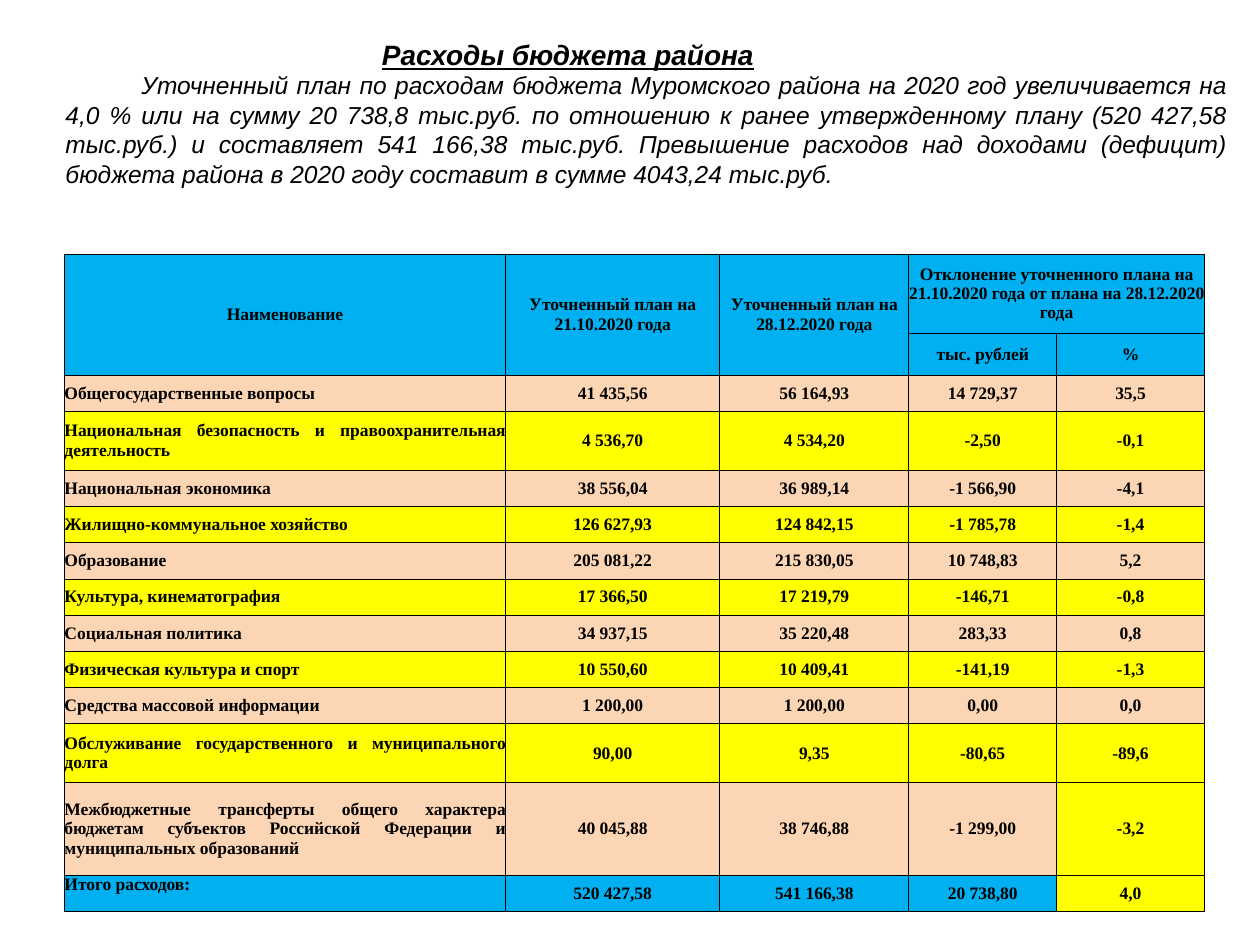
from dataclasses import dataclass

from lxml.etree import SubElement
from pptx import Presentation
from pptx.dml.color import RGBColor
from pptx.enum.text import MSO_ANCHOR, MSO_AUTO_SIZE, PP_ALIGN
from pptx.oxml.ns import qn
from pptx.util import Cm, Pt


@dataclass(frozen=True)
class Theme:
    text_font: str = "Arial"
    table_font: str = "Times New Roman"
    title_size: int = 16
    body_size: int = 14
    table_size: int = 10
    ink: str = "000000"
    blue: str = "00B0F0"
    peach: str = "FCD5B4"
    yellow: str = "FFFF00"
    border: float = 0.5


class SlideBuilder:
    def __init__(self, slide, theme):
        self.s = slide
        self.theme = theme

    def place(self, sp, left, top, width, height, inset):
        """Move a placeholder and return its text frame."""
        sp.left, sp.top, sp.width, sp.height = map(Cm, (left, top, width, height))
        tf = sp.text_frame
        tf.word_wrap = True
        tf.auto_size = MSO_AUTO_SIZE.NONE
        tf.vertical_anchor = MSO_ANCHOR.TOP
        tf.margin_left = tf.margin_right = Cm(inset)
        tf.margin_top = tf.margin_bottom = 0
        return tf

    def add_run(self, p, text, font, size, **flags):
        r = p.add_run()
        r.text = text
        r.font.name, r.font.size = font, Pt(size)
        r.font.color.rgb = RGBColor.from_string(self.theme.ink)
        for flag, value in flags.items():
            setattr(r.font, flag, value)

    def title(self, text, left, top, width, rule):
        """Title whose underline runs on to a tab stop."""
        tf = self.place(self.s.shapes.title, left, top, width, 0.7, 0)
        p = tf.paragraphs[0]
        p.alignment = PP_ALIGN.LEFT
        tabs = SubElement(p._p.get_or_add_pPr(), qn("a:tabLst"))
        SubElement(tabs, qn("a:tab"), pos=str(Cm(rule)), algn="l")
        self.add_run(p, text + "\t", self.theme.text_font, self.theme.title_size,
                     bold=True, italic=True, underline=True)

    def body(self, text, left, top, width, height, indent):
        tf = self.place(self.s.placeholders[1], left, top, width, height, 0.25)
        p = tf.paragraphs[0]
        p.alignment = PP_ALIGN.JUSTIFY
        p.space_before = Pt(0)
        pPr = p._p.get_or_add_pPr()
        pPr.set("marL", "0")
        pPr.set("indent", str(Cm(indent)))
        SubElement(pPr, qn("a:buNone"))
        self.add_run(p, text, self.theme.text_font, self.theme.body_size, italic=True)

    def cell(self, cell, text, fill, align):
        cell.margin_left = cell.margin_right = cell.margin_top = cell.margin_bottom = 0
        cell.vertical_anchor = MSO_ANCHOR.MIDDLE
        tcPr = cell._tc.get_or_add_tcPr()
        for side in ("lnL", "lnR", "lnT", "lnB"):
            ln = SubElement(tcPr, qn(f"a:{side}"), w=str(Pt(self.theme.border)))
            line = SubElement(ln, qn("a:solidFill"))
            SubElement(line, qn("a:srgbClr"), val=self.theme.ink)
        cell.fill.solid()
        cell.fill.fore_color.rgb = RGBColor.from_string(fill)
        if text:
            p = cell.text_frame.paragraphs[0]
            p.alignment = align
            self.add_run(p, text, self.theme.table_font, self.theme.table_size, bold=True)

    def table(self, rows, fills, left, top, widths, heights, header_rows):
        tbl = self.s.shapes.add_table(
            len(rows), len(widths), Cm(left), Cm(top),
            Cm(sum(widths)), Cm(sum(heights))).table
        tbl.first_row = tbl.horz_banding = False
        for col, width in zip(tbl.columns, widths):
            col.width = Cm(width)
        for i, (row, height) in enumerate(zip(rows, heights)):
            tbl.rows[i].height = Cm(height)
            for j, text in enumerate(row):
                is_name = j == 0 and i >= header_rows
                align = PP_ALIGN.JUSTIFY if is_name else PP_ALIGN.CENTER
                self.cell(tbl.cell(i, j), text, fills[i][j], align)
        return tbl


INTRO = (
    "Уточненный план по расходам бюджета Муромского района на 2020 год увеличивается "
    "на 4,0 % или на сумму 20 738,8 тыс.руб. по отношению к ранее утвержденному плану "
    "(520 427,58 тыс.руб.) и составляет 541 166,38 тыс.руб. Превышение расходов над "
    "доходами (дефицит) бюджета района в 2020 году составит в сумме 4043,24 тыс.руб."
)
HEADER = [
    ("Наименование", "Уточненный план на 21.10.2020 года",
     "Уточненный план на 28.12.2020 года",
     "Отклонение уточненного плана на 21.10.2020 года от плана на 28.12.2020 года", ""),
    ("", "", "", "тыс. рублей", "%"),
]
EXPENSES = [
    ("Общегосударственные вопросы", "41 435,56", "56 164,93", "14 729,37", "35,5"),
    ("Национальная безопасность и правоохранительная деятельность",
     "4 536,70", "4 534,20", "-2,50", "-0,1"),
    ("Национальная экономика", "38 556,04", "36 989,14", "-1 566,90", "-4,1"),
    ("Жилищно-коммунальное хозяйство", "126 627,93", "124 842,15", "-1 785,78", "-1,4"),
    ("Образование", "205 081,22", "215 830,05", "10 748,83", "5,2"),
    ("Культура, кинематография", "17 366,50", "17 219,79", "-146,71", "-0,8"),
    ("Социальная политика", "34 937,15", "35 220,48", "283,33", "0,8"),
    ("Физическая культура и спорт", "10 550,60", "10 409,41", "-141,19", "-1,3"),
    ("Средства массовой информации", "1 200,00", "1 200,00", "0,00", "0,0"),
    ("Обслуживание государственного и муниципального долга",
     "90,00", "9,35", "-80,65", "-89,6"),
    ("Межбюджетные трансферты общего характера бюджетам субъектов Российской "
     "Федерации и муниципальных образований",
     "40 045,88", "38 746,88", "-1 299,00", "-3,2"),
]
TOTAL = ("Итого расходов:", "520 427,58", "541 166,38", "20 738,80", "4,0")
WIDTHS = [8.89, 4.32, 3.81, 2.98, 2.98]
ROW, TWO_LINES, THREE_LINES = 0.73, 1.19, 1.86


def main():
    prs = Presentation()
    prs.slide_width, prs.slide_height = Cm(25.4), Cm(19.05)
    theme = Theme()
    builder = SlideBuilder(prs.slides.add_slide(prs.slide_layouts[1]), theme)

    # Heading and introduction
    builder.title("Расходы бюджета района", 7.7, 0.76, 12, 10.62)
    builder.body(INTRO, 1.07, 1.42, 23.93, 2.6, 1.53)

    # Row colours: blue header and total, alternating expenses
    n = len(WIDTHS)
    fills = [[theme.blue] * n for _ in HEADER]
    fills += [[(theme.peach, theme.yellow)[i % 2]] * n for i in range(len(EXPENSES))]
    fills.append([theme.blue] * n)
    for row in fills[-2:]:
        row[-1] = theme.yellow

    # Expense table
    heights = [1.6, 0.84, ROW, TWO_LINES] + [ROW] * 7 + [TWO_LINES, THREE_LINES, ROW]
    tbl = builder.table(HEADER + EXPENSES + [TOTAL], fills, 1.3, 5.12,
                        WIDTHS, heights, len(HEADER))
    for j in range(3):
        tbl.cell(0, j).merge(tbl.cell(1, j))
    tbl.cell(0, 3).merge(tbl.cell(0, 4))
    tbl.cell(len(heights) - 1, 0).vertical_anchor = MSO_ANCHOR.TOP

    prs.save("out.pptx")


if __name__ == "__main__":
    main()
